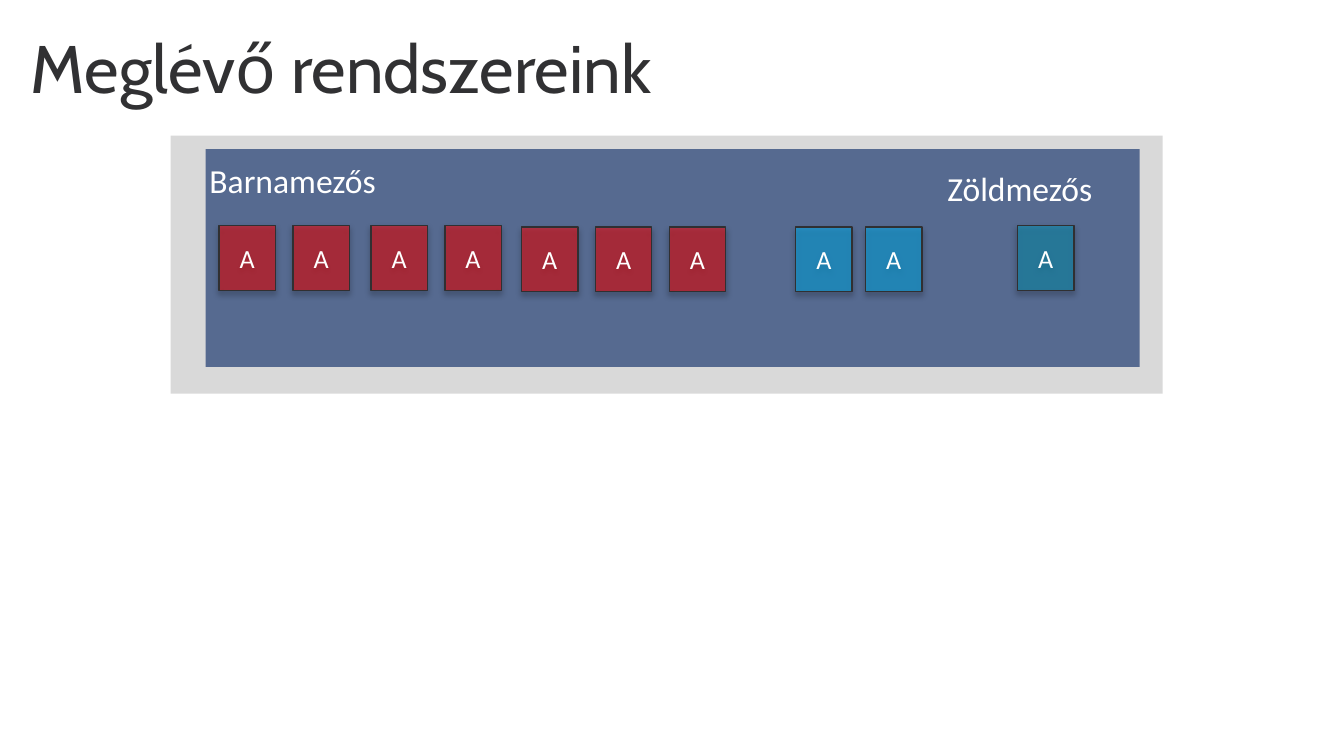
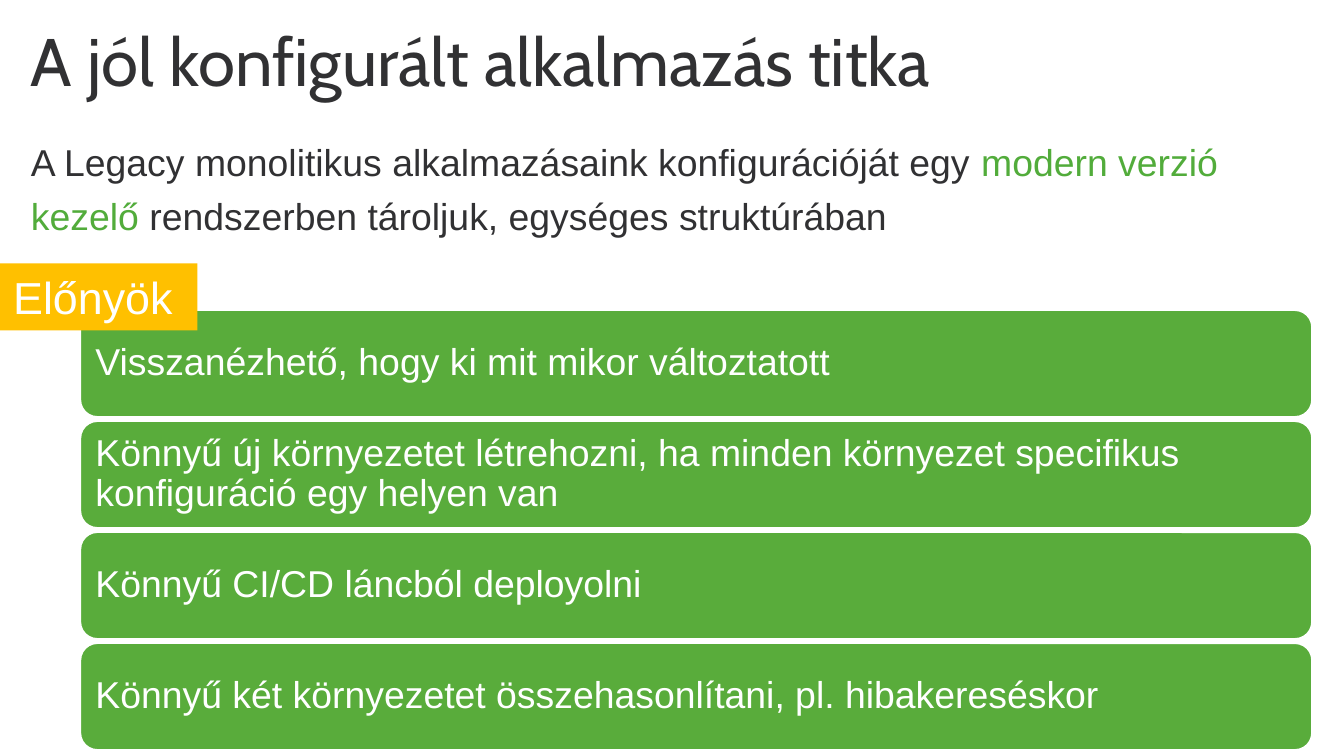
import pptx
import pptx.util
import pptx.oxml
import pptx.oxml.ns
import pptx.dml.color
import pptx.enum.shapes
import pptx.enum.text

RECT = pptx.enum.shapes.MSO_SHAPE.RECTANGLE
ROUND = pptx.enum.shapes.MSO_SHAPE.ROUNDED_RECTANGLE
MID = pptx.enum.text.MSO_ANCHOR.MIDDLE
TOP = pptx.enum.text.MSO_ANCHOR.TOP
LEFT = pptx.enum.text.PP_ALIGN.LEFT
MIDDLE = pptx.enum.text.PP_ALIGN.CENTER

WHITE, INK, GREEN = "FFFFFF", "313133", "59AC3B"
GREY, NAVY, GOLD = "D9D9D9", "002060", "FFC000"
RED, BLUE, TEAL, EDGE = "FF0000", "00B0F0", "0896B8", "303032"

deck = pptx.Presentation()
deck.slide_width = pptx.util.Inches(10)
deck.slide_height = deck.slide_width * 9 // 16
COL = ROW = deck.slide_width / 100

SHADE = (
    '<a:effectLst %s><a:outerShdw blurRad="39370" dist="22860" dir="5400000" rotWithShape="0">'
    '<a:srgbClr val="000000"><a:alpha val="35000"/></a:srgbClr></a:outerShdw></a:effectLst>'
    % pptx.oxml.ns.nsdecls("a")
)


def paint(fill, tint, alpha=100):
    fill.solid()
    fill.fore_color.rgb = pptx.dml.color.RGBColor.from_string(tint)
    if alpha < 100:
        node = fill._xPr.find(".//" + pptx.oxml.ns.qn("a:srgbClr"))
        node.append(pptx.oxml.parse_xml(
            '<a:alpha %s val="%d"/>' % (pptx.oxml.ns.nsdecls("a"), alpha * 1000)))


def write(slide, place, text="", kind=None, fill=None, alpha=100, line=None, shade=False,
          font="Arial", size=20, tint=WHITE, align=LEFT, anchor=TOP, space=None,
          inset=None, wrap=True):
    x, y, w, h = place
    spot = [round(n) for n in (x * COL, y * ROW, w * COL, h * ROW)]
    if kind is None:
        box = slide.shapes.add_textbox(*spot)
    else:
        box = slide.shapes.add_shape(kind, *spot)
        paint(box.fill, fill, alpha)
        if line:
            paint(box.line.fill, line[0])
            box.line.width = pptx.util.Pt(line[1])
        else:
            box.line.fill.background()
        if shade:
            box._element.spPr.append(pptx.oxml.parse_xml(SHADE))
        else:
            box.shadow.inherit = False
    if not text:
        return
    frame = box.text_frame
    frame.word_wrap = wrap
    frame.vertical_anchor = anchor
    if inset is not None:
        frame.margin_left = frame.margin_right = pptx.util.Inches(inset)
        frame.margin_top = frame.margin_bottom = pptx.util.Inches(inset)
    para = frame.paragraphs[0]
    para.alignment = align
    if space:
        para.line_spacing = space
    for part, hue in [(text, tint)] if isinstance(text, str) else text:
        run = para.add_run()
        run.text = part
        run.font.name = font
        run.font.size = pptx.util.Pt(size)
        paint(run.font.fill, hue)


pages = []
for title, top in [("Meglévő rendszereink", 3.1), ("A jól konfigurált alkalmazás titka", 2.6)]:
    page = deck.slides.add_slide(deck.slide_layouts[6])
    write(page, (2.3, top, 91.8, 4.8), title, font="Cabin", size=36, tint=INK,
          space=0.8, inset=0)
    pages.append(page)
fields, perks = pages

write(fields, (12.7, 10.1, 73.8, 19.2), kind=RECT, fill=GREY)
write(fields, (15.3, 11.1, 69.5, 16.2), kind=RECT, fill=NAVY, alpha=60)

groups = [
    (16.3, 16.8, 2, 5.5, RED),
    (27.6, 16.8, 2, 5.5, RED),
    (38.8, 16.9, 3, 5.5, RED),
    (59.2, 16.9, 2, 5.2, BLUE),
    (75.7, 16.8, 1, 0, TEAL),
]
for left, top, count, step, tint in groups:
    for i in range(count):
        write(fields, (left + i * step, top, 4.2, 4.8), "A", kind=RECT, fill=tint, alpha=51,
              line=(EDGE, 0.75), shade=True, font="Calibri", size=14,
              align=MIDDLE, anchor=MID)

for place, label in [((69.5, 12, 12.9, 4), "Zöldmezős"), ((14.6, 11.4, 14.5, 4), "Barnamezős")]:
    write(fields, place, label, font="Calibri", size=18, wrap=False)

intro = [
    ("A Legacy monolitikus alkalmazásaink konfigurációját egy ", INK),
    ("modern verzió kezelő ", "52AC3B"),
    ("rendszerben tároljuk, egységes struktúrában", INK),
]
write(perks, (2.3, 9.7, 91.8, 40.7), intro, space=1.2, inset=0)

gains = [
    "Visszanézhető, hogy ki mit mikor változtatott",
    "Könnyű új környezetet létrehozni, ha minden környezet specifikus konfiguráció egy helyen van",
    "Könnyű CI/CD láncból deployolni",
    "Könnyű két környezetet összehasonlítani, pl. hibakereséskor",
]
for i, gain in enumerate(gains):
    write(perks, (5.9, 23 + i * 8.26, 91.8, 8.1), gain, kind=ROUND, fill=GREEN,
          line=(WHITE, 2), anchor=MID, space=0.9, inset=0.08)

write(perks, (0, 19.6, 14.7, 5), "Előnyök", kind=RECT, fill=GOLD, size=24)

deck.save("out.pptx")
